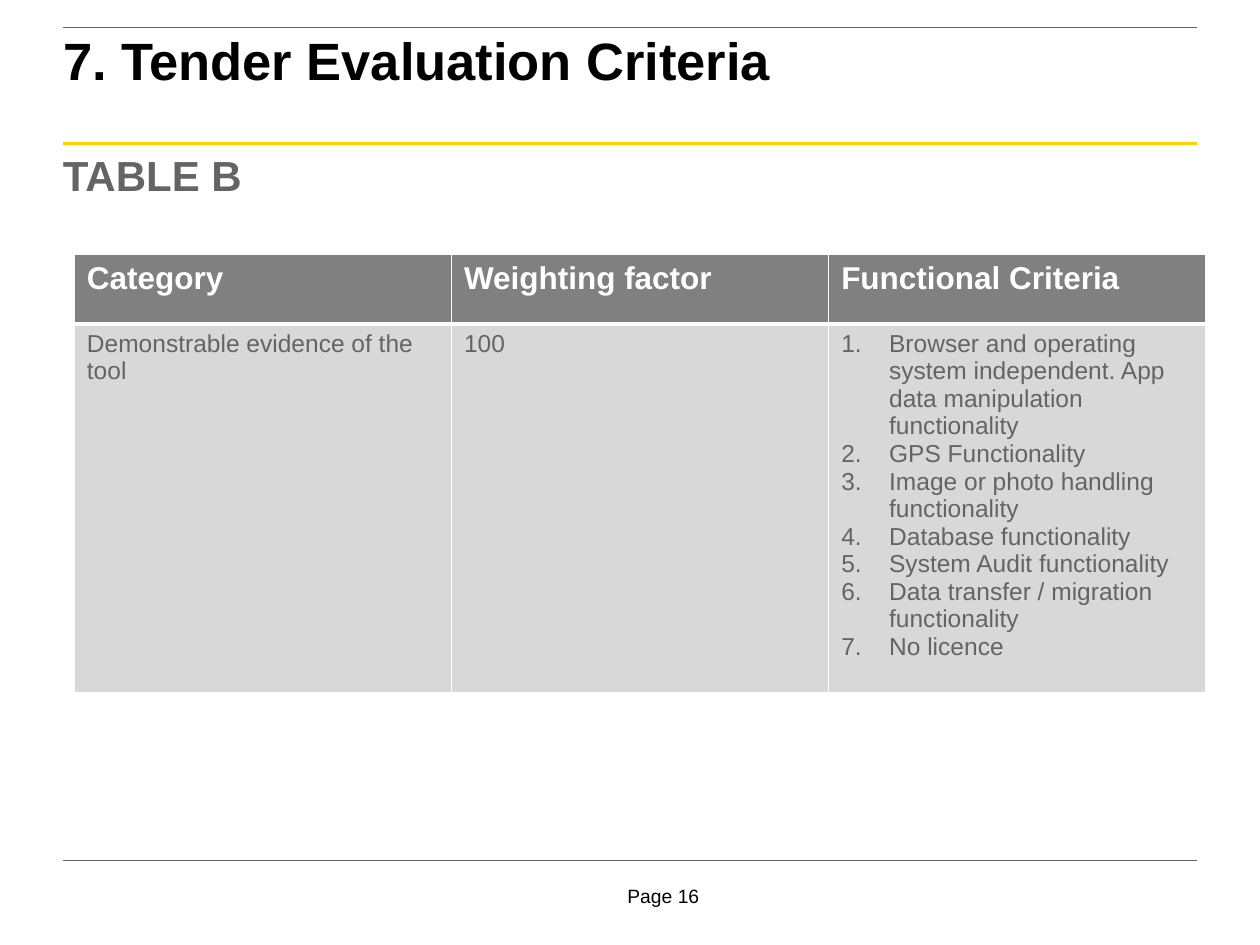
from dataclasses import dataclass

from lxml import etree
from pptx import Presentation
from pptx.dml.color import RGBColor
from pptx.enum.shapes import MSO_CONNECTOR
from pptx.enum.text import MSO_ANCHOR
from pptx.oxml.ns import qn
from pptx.util import Inches, Pt


@dataclass(frozen=True)
class Theme:
    font: str = "Arial"
    black: str = "000000"
    grey: str = "646464"
    yellow: str = "FFD200"
    white: str = "FFFFFF"
    header_fill: str = "808080"
    body_fill: str = "D8D8D8"
    title_size: int = 30
    subtitle_size: int = 24
    header_size: int = 18
    body_size: int = 14
    footer_size: int = 11


THEME = Theme()
HEADERS = ["Category", "Weighting factor", "Functional Criteria"]
CRITERIA = [
    "Browser and operating system independent. App data manipulation functionality",
    "GPS Functionality",
    "Image or photo handling functionality",
    "Database functionality",
    "System Audit functionality",
    "Data transfer / migration functionality",
    "No licence",
]
BODY = [["Demonstrable evidence of the tool"], ["100"], CRITERIA]


def set_values(target, values):
    for name, value in values.items():
        setattr(target, name, value)


def write(text_frame, lines, size, color, bold=False, numbered=False):
    for index, line in enumerate(lines):
        paragraph = text_frame.paragraphs[0] if index == 0 else text_frame.add_paragraph()
        paragraph.text = line
        if numbered:
            number_paragraph(paragraph)
        set_values(paragraph.font, {"name": THEME.font, "size": Pt(size), "bold": bold})
        paragraph.font.color.rgb = RGBColor.from_string(color)


def number_paragraph(paragraph):
    properties = paragraph._p.get_or_add_pPr()
    indent = Inches(0.38)
    properties.set("marL", str(indent))
    properties.set("indent", str(-indent))
    etree.SubElement(properties, qn("a:buFont"), typeface="+mj-lt")
    etree.SubElement(properties, qn("a:buAutoNum"), type="arabicPeriod")


def set_frame(text_frame, top_inset=0.0, wrap=True):
    set_values(text_frame, {
        "margin_left": 0, "margin_right": 0, "margin_bottom": 0,
        "margin_top": Inches(top_inset), "word_wrap": wrap,
        "vertical_anchor": MSO_ANCHOR.TOP,
    })


def add_rule(slide, left, top, width, color, weight):
    rule = slide.shapes.add_connector(
        MSO_CONNECTOR.STRAIGHT,
        Inches(left), Inches(top), Inches(left + width), Inches(top))
    rule.line.color.rgb = RGBColor.from_string(color)
    rule.line.width = Pt(weight)
    etree.SubElement(rule._element.spPr, qn("a:effectLst"))


def place_title(slide, left, top, width, height):
    title = slide.shapes.title
    set_values(title, {"left": Inches(left), "top": Inches(top),
                       "width": Inches(width), "height": Inches(height)})
    set_frame(title.text_frame, top_inset=0.08)
    write(title.text_frame, ["7. Tender Evaluation Criteria"],
          THEME.title_size, THEME.black, bold=True)
    paragraph = title.text_frame.paragraphs[0]
    paragraph.line_spacing = 0.85
    paragraph.alignment = 1


def add_label(slide, left, top, width, height, text, size, color, bold=False, wrap=True):
    box = slide.shapes.add_textbox(
        Inches(left), Inches(top), Inches(width), Inches(height))
    set_frame(box.text_frame, wrap=wrap)
    write(box.text_frame, [text], size, color, bold)


def set_borders(cell, weights):
    """Draw white borders; weights maps the sides L, R, T and B to points."""
    properties = cell._tc.get_or_add_tcPr()
    for index, (side, weight) in enumerate(weights.items()):
        line = etree.Element(qn(f"a:ln{side}"), w=str(Pt(weight)))
        fill = etree.SubElement(line, qn("a:solidFill"))
        etree.SubElement(fill, qn("a:srgbClr"), val=THEME.white)
        properties.insert(index, line)


def add_criteria_table(slide, left, top, width, row_heights):
    table = slide.shapes.add_table(
        len(row_heights), len(HEADERS), Inches(left), Inches(top),
        Inches(width), Inches(sum(row_heights))).table
    for column in table.columns:
        column.width = Inches(width / len(HEADERS))
    for row, height in zip(table.rows, row_heights):
        row.height = Inches(height)

    header_style = (THEME.header_fill, THEME.header_size, THEME.white, True,
                    {"L": 1, "R": 1, "T": 1, "B": 3})
    body_style = (THEME.body_fill, THEME.body_size, THEME.grey, False,
                  {"L": 1, "R": 1, "T": 3, "B": 1})
    rows = [([[header] for header in HEADERS], header_style), (BODY, body_style)]
    for row_index, (contents, (fill, size, color, bold, borders)) in enumerate(rows):
        for column_index, lines in enumerate(contents):
            cell = table.cell(row_index, column_index)
            cell.fill.solid()
            cell.fill.fore_color.rgb = RGBColor.from_string(fill)
            set_borders(cell, borders)
            write(cell.text_frame, lines, size, color, bold, numbered=len(lines) > 1)


def main():
    presentation = Presentation()
    set_values(presentation, {"slide_width": Inches(10), "slide_height": Inches(7.5)})
    slide = presentation.slides.add_slide(presentation.slide_layouts[5])

    for top, color, weight in [(0.22, THEME.grey, 0.5), (1.14, THEME.yellow, 1.5),
                               (6.83, THEME.grey, 0.25)]:
        add_rule(slide, 0.5, top, 9, color, weight)
    place_title(slide, 0.5, 0.22, 9, 0.94)
    add_label(slide, 0.5, 1.19, 9.07, 0.5, "TABLE B",
              THEME.subtitle_size, THEME.grey, bold=True)
    add_criteria_table(slide, 0.59, 2.02, 8.98, [0.55, 2.93])
    add_label(slide, 4.98, 7.02, 0.73, 0.22, "Page 16",
              THEME.footer_size, THEME.black, wrap=False)
    presentation.save("out.pptx")


if __name__ == "__main__":
    main()
